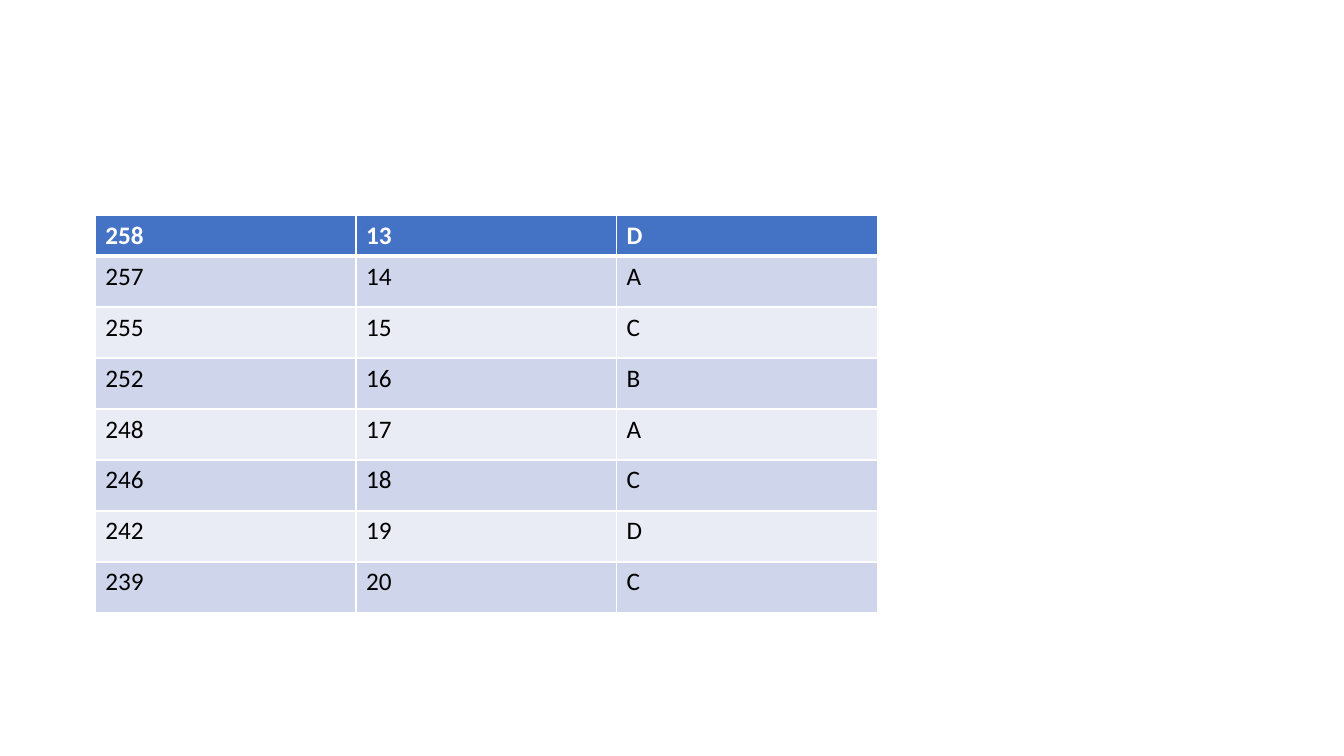
from lxml.etree import SubElement
from pptx import Presentation
from pptx.dml.color import RGBColor
from pptx.oxml.ns import qn
from pptx.util import Cm, Pt

WHITE = RGBColor(0xFF, 0xFF, 0xFF)
BLACK = RGBColor(0x00, 0x00, 0x00)
HEADER_BLUE = RGBColor(0x44, 0x72, 0xC4)
BAND_DARK = RGBColor(0xCF, 0xD5, 0xEA)
BAND_LIGHT = RGBColor(0xE9, 0xEB, 0xF5)

ROWS = [
    ("258", "13", "D"),
    ("257", "14", "A"),
    ("255", "15", "C"),
    ("252", "16", "B"),
    ("248", "17", "A"),
    ("246", "18", "C"),
    ("242", "19", "D"),
    ("239", "20", "C"),
]
COLUMN_WIDTH = Cm(6.57)
HEADER_HEIGHT = Cm(1.01)
ROW_HEIGHT = Cm(1.285)


def set_borders(cell, top, bottom):
    """Draw white cell borders; top and bottom are widths in points."""
    properties = cell._tc.get_or_add_tcPr()
    for side, width in (("L", 1), ("R", 1), ("T", top), ("B", bottom)):
        line = SubElement(properties, qn(f"a:ln{side}"), w=str(Pt(width)))
        fill = SubElement(line, qn("a:solidFill"))
        SubElement(fill, qn("a:srgbClr"), val=str(WHITE))


def fill_cell(cell, text, row):
    is_header = row == 0
    set_borders(cell, top=3 if row == 1 else 1, bottom=3 if is_header else 1)
    cell.fill.solid()
    band = BAND_DARK if row % 2 else BAND_LIGHT
    cell.fill.fore_color.rgb = HEADER_BLUE if is_header else band

    cell.text_frame.text = text
    font = cell.text_frame.paragraphs[0].runs[0].font
    font.name = "Calibri"
    font.size = Pt(18)
    font.bold = is_header
    font.color.rgb = WHITE if is_header else BLACK


def add_answer_table(page, left, top):
    column_count = len(ROWS[0])
    height = HEADER_HEIGHT + ROW_HEIGHT * (len(ROWS) - 1)
    frame = page.shapes.add_table(
        len(ROWS), column_count, left, top, COLUMN_WIDTH * column_count, height
    )
    table = frame.table
    for row, values in enumerate(ROWS):
        table.rows[row].height = ROW_HEIGHT if row else HEADER_HEIGHT
        for column, text in enumerate(values):
            fill_cell(table.cell(row, column), text, row)


def main():
    # Widescreen deck with one blank page
    deck = Presentation()
    deck.slide_width = Cm(33.87)
    deck.slide_height = Cm(19.05)
    page = deck.slides.add_slide(deck.slide_layouts[6])

    # Table of numbers and letters
    add_answer_table(page, Cm(2.4), Cm(5.42))

    deck.save("out.pptx")


if __name__ == "__main__":
    main()
